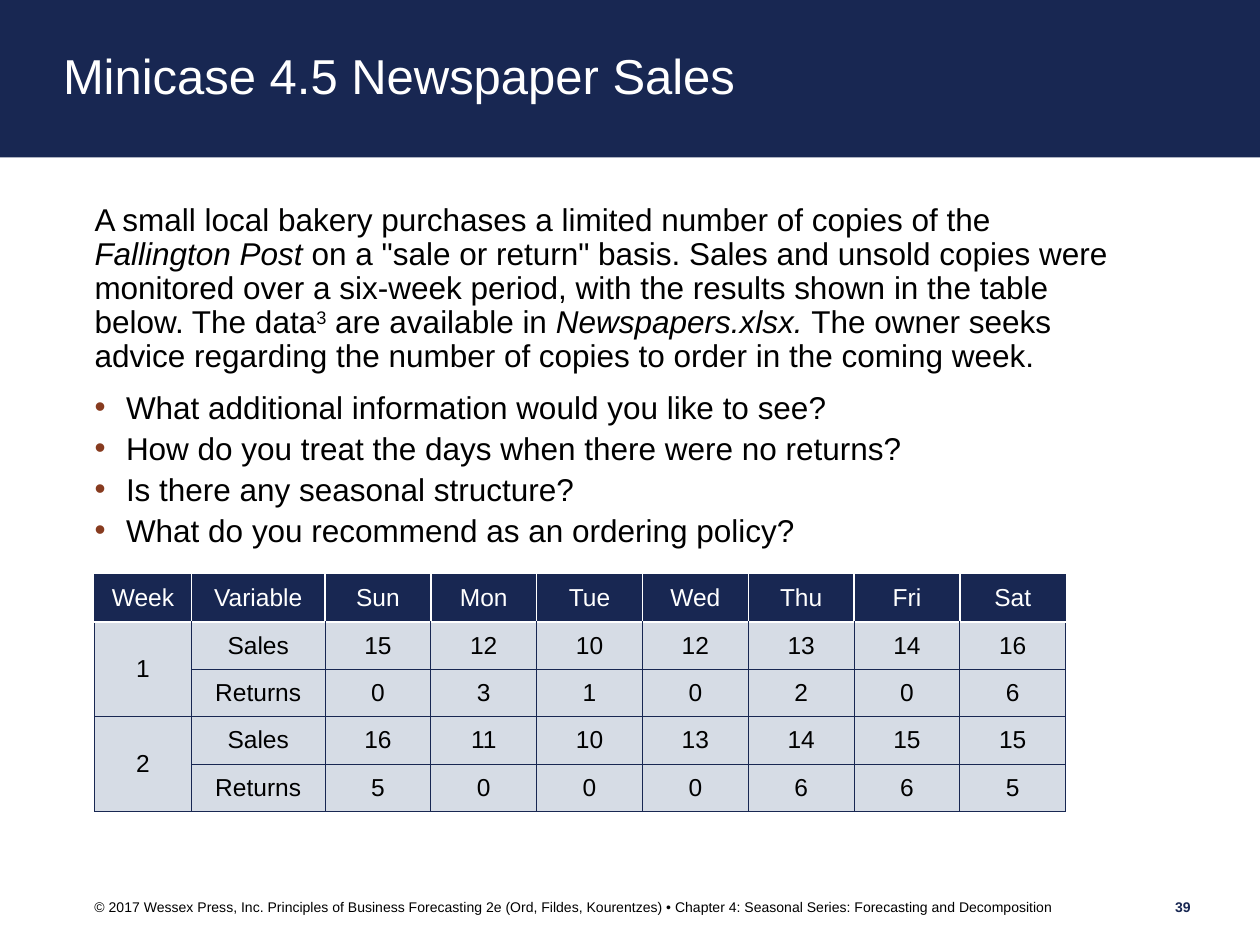
from dataclasses import dataclass

from lxml.etree import SubElement
from pptx import Presentation
from pptx.dml.color import RGBColor
from pptx.enum.text import MSO_ANCHOR, MSO_AUTO_SIZE, PP_ALIGN
from pptx.oxml.ns import qn
from pptx.util import Inches, Pt


@dataclass(frozen=True)
class Theme:
    font: str = "Arial"
    navy: str = "182752"
    white: str = "FFFFFF"
    black: str = "000000"
    pale: str = "D6DCE5"
    rust: str = "873B1F"
    head: int = 28
    body: int = 18
    cell: int = 14
    foot: int = 8


THEME = Theme()

TITLE = "Minicase 4.5 Newspaper Sales"
INTRO = [
    ("A small local bakery purchases a limited number of copies of the ", ""),
    ("Fallington Post ", "italic"),
    ('on a "sale or return" basis. Sales and unsold copies were monitored over '
     "a six-week period, with the results shown in the table below. The data", ""),
    ("3", "super"),
    (" are available in ", ""),
    ("Newspapers.xlsx. ", "italic"),
    ("The owner seeks advice regarding the number of copies to order in the "
     "coming week.", ""),
]
ASKS = [
    "What additional information would you like to see?",
    "How do you treat the days when there were no returns?",
    "Is there any seasonal structure?",
    "What do you recommend as an ordering policy?",
]
ROWS = [
    ["Week", "Variable", "Sun", "Mon", "Tue", "Wed", "Thu", "Fri", "Sat"],
    ["1", "Sales", 15, 12, 10, 12, 13, 14, 16],
    ["", "Returns", 0, 3, 1, 0, 2, 0, 6],
    ["2", "Sales", 16, 11, 10, 13, 14, 15, 15],
    ["", "Returns", 5, 0, 0, 0, 6, 6, 5],
]
WIDTHS = [0.77, 1.06] + [0.84] * 7
CREDIT = (
    "© 2017 Wessex Press, Inc. Principles of Business Forecasting 2e "
    "(Ord, Fildes, Kourentzes) • Chapter 4: Seasonal Series: "
    "Forecasting and Decomposition"
)


def color(code):
    return RGBColor.from_string(code)


def add_run(para, text, size, tint, style=""):
    run = para.add_run()
    run.text = text
    font = run.font
    font.name, font.size = THEME.font, Pt(size)
    font.color.rgb = color(tint)
    if style == "italic":
        font.italic = True
    elif style == "bold":
        font.bold = True
    elif style == "super":
        font._element.set("baseline", "30000")


def place(shape, box):
    shape.left, shape.top, shape.width, shape.height = map(Inches, box)


def set_frame(frame, anchor, insets=(0, 0, 0, 0)):
    frame.word_wrap = True
    frame.auto_size = MSO_AUTO_SIZE.NONE
    frame.vertical_anchor = anchor
    (frame.margin_left, frame.margin_top,
     frame.margin_right, frame.margin_bottom) = map(Inches, insets)


def set_mark(para, mark=None):
    props = para._p.get_or_add_pPr()
    dent = Inches(0.25) if mark else 0
    props.set("marL", str(dent))
    props.set("indent", str(-dent))
    if mark:
        tint = SubElement(props, qn("a:buClr"))
        SubElement(tint, qn("a:srgbClr"), val=THEME.rust)
        SubElement(props, qn("a:buFont"), typeface=THEME.font)
        SubElement(props, qn("a:buChar"), char=mark)
    else:
        SubElement(props, qn("a:buNone"))


def add_title(slide, box):
    title = slide.shapes.title
    place(title, box)
    title.fill.solid()
    title.fill.fore_color.rgb = color(THEME.navy)
    set_frame(title.text_frame, MSO_ANCHOR.MIDDLE, (0.5, 0.05, 0, 0.05))
    para = title.text_frame.paragraphs[0]
    para.alignment = PP_ALIGN.LEFT
    para.line_spacing = 0.9
    add_run(para, TITLE, THEME.head, THEME.white)


def add_body(slide, box):
    body = slide.placeholders[1]
    place(body, box)
    frame = body.text_frame
    set_frame(frame, MSO_ANCHOR.TOP)
    intro = frame.paragraphs[0]
    set_mark(intro)
    intro.line_spacing, intro.space_before = 0.9, Pt(0)
    for text, style in INTRO:
        add_run(intro, text, THEME.body, THEME.black, style)
    for num, text in enumerate(ASKS):
        para = frame.add_paragraph()
        set_mark(para, "•")
        para.line_spacing = 0.9
        para.space_before = Pt(4 if num else 10)
        add_run(para, text, THEME.body, THEME.black)


def add_edge(cell, side, tint, width):
    props = cell._tc.get_or_add_tcPr()
    line = SubElement(props, qn(f"a:ln{side}"), w=str(Pt(width)))
    fill = SubElement(line, qn("a:solidFill"))
    SubElement(fill, qn("a:srgbClr"), val=tint)


def style_cell(cell, row, col):
    dark, light = (THEME.navy, 0.5), (THEME.white, 1)
    head = row == 0
    edges = {
        "L": light if head and col else dark,
        "R": light if head and col < len(WIDTHS) - 1 else dark,
        "T": light if row == 1 else dark,
        "B": light if head else dark,
    }
    for side, (tint, width) in edges.items():
        add_edge(cell, side, tint, width)
    cell.fill.solid()
    cell.fill.fore_color.rgb = color(THEME.navy if head else THEME.pale)
    cell.vertical_anchor = MSO_ANCHOR.MIDDLE
    cell.margin_left = cell.margin_right = Inches(0.03)
    cell.margin_top = cell.margin_bottom = 0


def add_grid(slide, box):
    shape = slide.shapes.add_table(len(ROWS), len(WIDTHS), *map(Inches, box))
    grid = shape.table
    for col, width in zip(grid.columns, WIDTHS):
        col.width = Inches(width)
    for top in (1, 3):
        grid.cell(top, 0).merge(grid.cell(top + 1, 0))
    for row, items in enumerate(ROWS):
        for col, item in enumerate(items):
            cell = grid.cell(row, col)
            style_cell(cell, row, col)
            if item != "":
                para = cell.text_frame.paragraphs[0]
                para.alignment = PP_ALIGN.CENTER
                tint = THEME.black if row else THEME.white
                add_run(para, str(item), THEME.cell, tint)


def add_note(slide, box, text, tint, align, style=""):
    note = slide.shapes.add_textbox(*map(Inches, box))
    set_frame(note.text_frame, MSO_ANCHOR.MIDDLE)
    para = note.text_frame.paragraphs[0]
    para.alignment = align
    add_run(para, text, THEME.foot, tint, style)


def main():
    deck = Presentation()
    deck.slide_width, deck.slide_height = Inches(10), Inches(7.5)
    slide = deck.slides.add_slide(deck.slide_layouts[1])
    add_title(slide, (0, 0, 10, 1.25))
    add_body(slide, (0.75, 1.62, 8.25, 5.14))
    add_note(slide, (0.75, 7.1, 8.14, 0.2), CREDIT, THEME.black, PP_ALIGN.LEFT)
    add_note(slide, (9, 7.1, 0.45, 0.2), "39", THEME.navy, PP_ALIGN.RIGHT, "bold")
    add_grid(slide, (0.75, 4.56, sum(WIDTHS), 1.88))
    deck.save("out.pptx")


if __name__ == "__main__":
    main()
